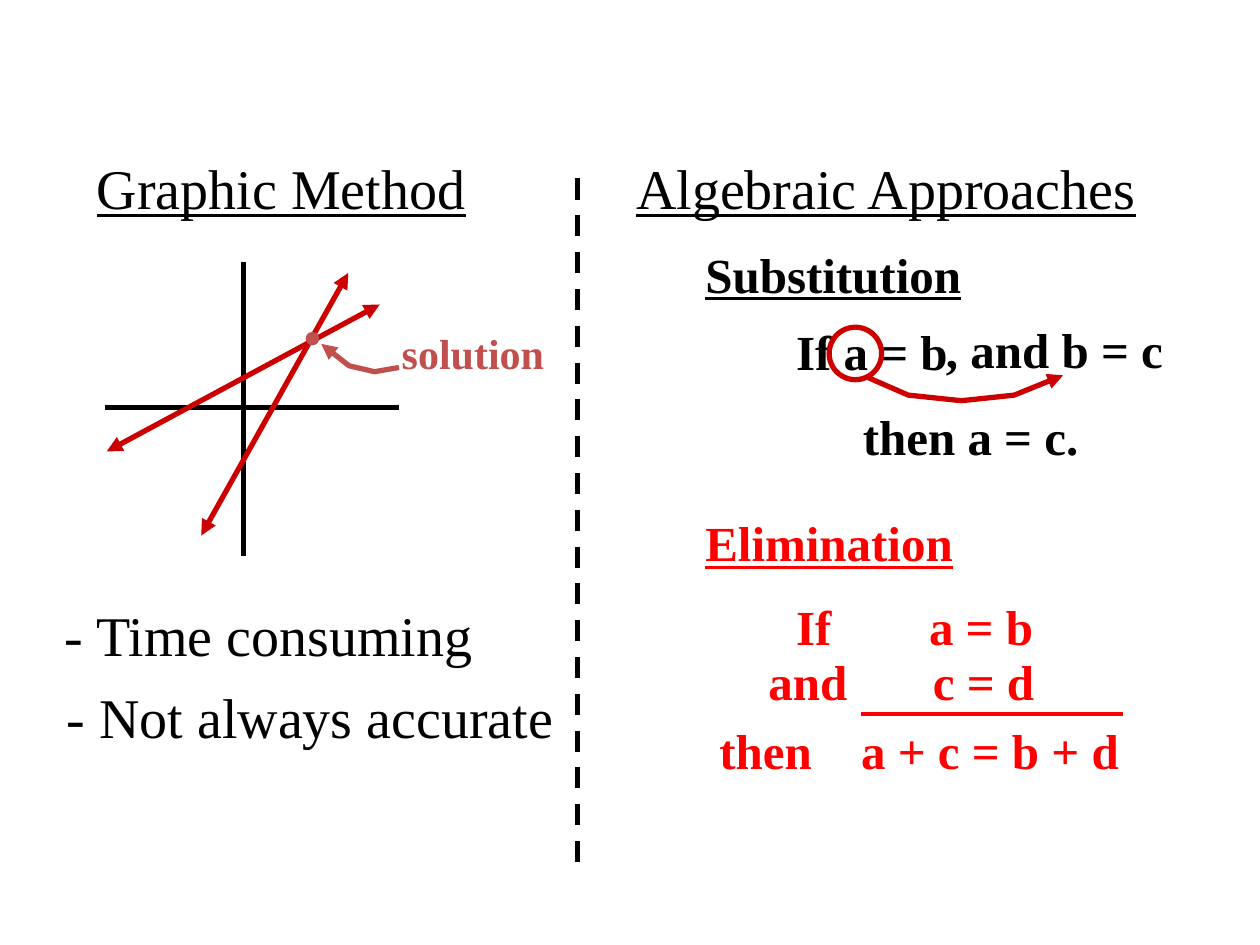
from lxml import etree
from pptx import Presentation
from pptx.dml.color import RGBColor
from pptx.enum.dml import MSO_LINE
from pptx.enum.shapes import MSO_CONNECTOR, MSO_SHAPE
from pptx.enum.text import MSO_AUTO_SIZE
from pptx.oxml.ns import qn
from pptx.util import Pt

BLACK = RGBColor(0x00, 0x00, 0x00)
CRIMSON = RGBColor(0xCC, 0x00, 0x00)
RED = RGBColor(0xFF, 0x00, 0x00)
BRICK = RGBColor(0xC0, 0x50, 0x4D)

STRAIGHT = MSO_CONNECTOR.STRAIGHT
OVAL = MSO_SHAPE.OVAL
DASH = MSO_LINE.DASH
GROW = MSO_AUTO_SIZE.SHAPE_TO_FIT_TEXT

BLANK_LAYOUT = 6


class Board:
    """Holds the style and the current slide; all lengths are in points."""

    font_name = "Times New Roman"
    stroke = 3

    def __init__(self, page):
        self.page = page
        self.shapes = page.shapes

    def text(self, words, left, top, width, height, size=28, color=BLACK,
             bold=False, underline=False, tab=None):
        box = self.shapes.add_textbox(Pt(left), Pt(top), Pt(width), Pt(height))
        frame = box.text_frame
        frame.word_wrap = False
        frame.auto_size = GROW
        para = frame.paragraphs[0]
        para.text = words
        font = para.font
        font.name, font.size = self.font_name, Pt(size)
        font.bold, font.underline = bold, underline
        font.color.rgb = color
        if tab is not None:
            stops = etree.Element(qn("a:tabLst"))
            etree.SubElement(stops, qn("a:tab"), pos=str(Pt(tab)), algn="l")
            para._p.get_or_add_pPr().insert(0, stops)

    def style_line(self, line, color, width, ends=()):
        line.color.rgb = color
        line.width = Pt(width)
        for end in ends:
            etree.SubElement(line._get_or_add_ln(), qn(f"a:{end}"), type="triangle")

    def line(self, start, finish, color=BLACK, width=stroke, ends=(), dash=None):
        x1, y1, x2, y2 = (Pt(value) for value in (*start, *finish))
        connector = self.shapes.add_connector(STRAIGHT, x1, y1, x2, y2)
        if dash is not None:
            connector.line.dash_style = dash
        self.style_line(connector.line, color, width, ends)
        etree.SubElement(connector._element.spPr, qn("a:effectLst"))

    def circle(self, left, top, size, color, width=stroke, filled=False):
        oval = self.shapes.add_shape(OVAL, Pt(left), Pt(top), Pt(size), Pt(size))
        oval.shadow.inherit = False
        if filled:
            oval.fill.solid()
            oval.fill.fore_color.rgb = color
        else:
            oval.fill.background()
        self.style_line(oval.line, color, width)

    def bent_arrow(self, points, color):
        start, *rest = [(Pt(x), Pt(y)) for x, y in points]
        builder = self.shapes.build_freeform(*start)
        builder.add_line_segments(rest, close=False)
        arrow = builder.convert_to_shape()
        arrow.shadow.inherit = False
        arrow.fill.background()
        self.style_line(arrow.line, color, self.stroke, ["tailEnd"])


def draw_graphic_method(board):
    board.text("Graphic Method", 48.2, 84, 225.4, 45.4, size=32, underline=True)

    # Axes
    board.line((139, 150), (139, 318))
    board.line((60, 233), (228, 233))

    # Two crossing lines and their solution
    for start, finish in (((61, 258), (217, 174)), ((115, 306), (199, 156))):
        board.line(start, finish, CRIMSON, ends=("headEnd", "tailEnd"))
    board.circle(175, 190, 7, BRICK, width=0.75, filled=True)
    board.text("solution", 222.5, 183.6, 95.8, 36, size=24, color=BRICK, bold=True)
    board.bent_arrow([(228, 210), (214, 212.4), (199.5, 209), (183.6, 196.5)], BRICK)

    # Drawbacks
    board.text("- Time consuming", 30, 339.8, 249, 45.4, size=32)
    board.text("- Not always accurate", 31, 386.6, 293, 45.4, size=32)


def draw_algebraic_approaches(board):
    board.text("Algebraic Approaches", 356.4, 84, 301.7, 45.4, size=32, underline=True)

    # Substitution
    board.text("Substitution", 396, 136, 161.3, 41, bold=True, underline=True)
    board.text("If a = b", 447.8, 180.3, 101.5, 41, bold=True)
    board.text(", and b = c", 533.5, 179.3, 139, 41, bold=True)
    board.circle(473.8, 187, 30, CRIMSON)
    board.bent_arrow([(496, 215.8), (519, 225.8), (549.4, 229), (579.6, 225.8),
                      (607.5, 214.5)], CRIMSON)
    board.text("then a = c.", 486, 229, 137.5, 41, bold=True)

    # Elimination, with each equation at a tab stop
    board.text("Elimination", 396, 289.6, 156.2, 41, color=RED, bold=True, underline=True)
    for words, left, top, width, tab in (
        ("If\ta = b", 447.8, 337.2, 150.5, 76),
        ("and\tc = d", 432, 368.8, 167, 94),
        ("then\ta + c = b + d", 404, 408.2, 249.8, 81),
    ):
        board.text(words, left, top, width, 41, color=RED, bold=True, tab=tab)
    board.line((492, 408), (642, 408), RED, width=2.25)


def main():
    deck = Presentation()
    deck.slide_width, deck.slide_height = Pt(720), Pt(540)
    page = deck.slides.add_slide(deck.slide_layouts[BLANK_LAYOUT])
    board = Board(page)
    draw_graphic_method(board)
    board.line((330, 102), (330, 498), dash=DASH)  # Divider between the halves
    draw_algebraic_approaches(board)
    deck.save("out.pptx")


if __name__ == "__main__":
    main()
